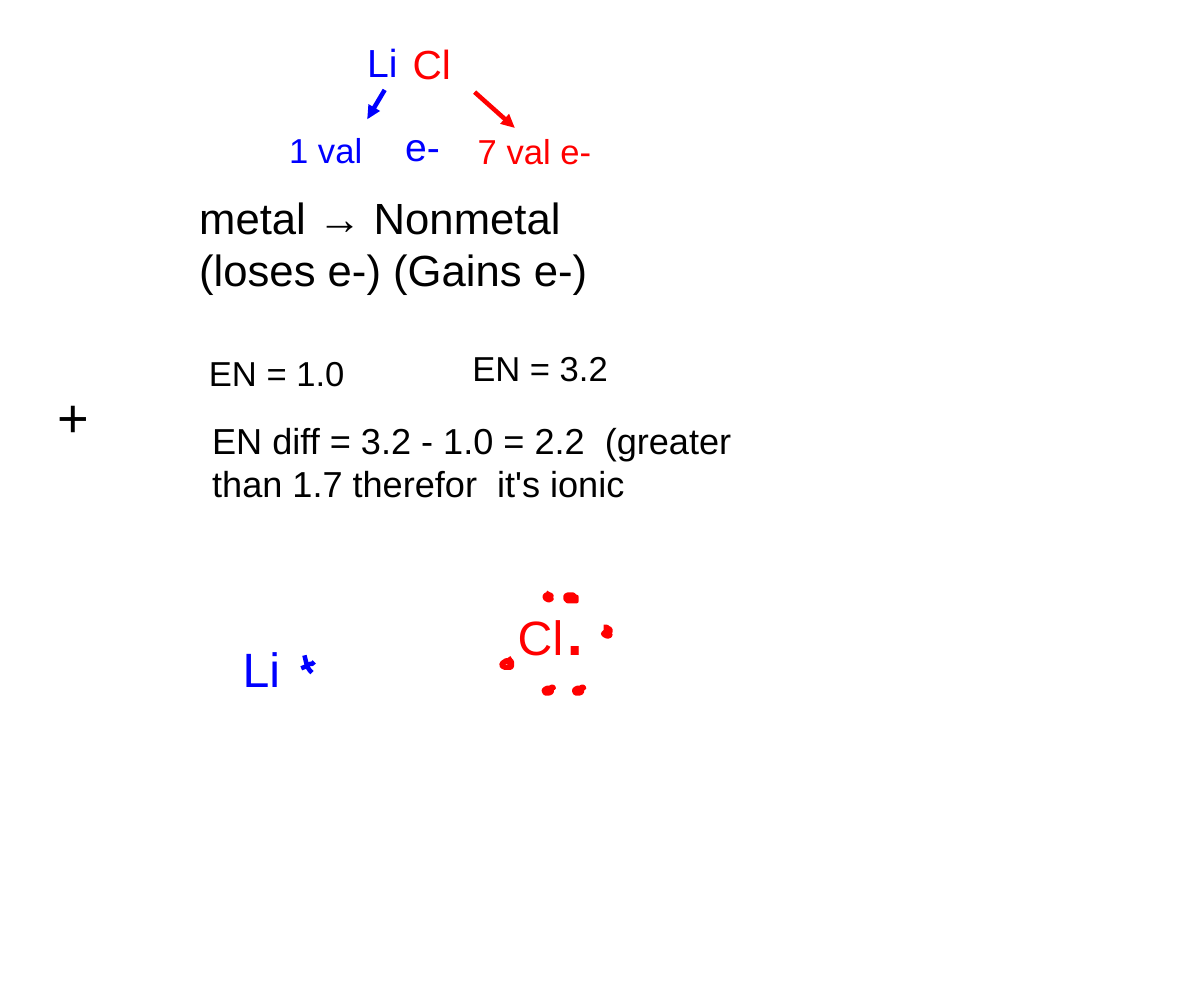
from lxml import etree
from pptx import Presentation
from pptx.dml.color import RGBColor
from pptx.enum.shapes import MSO_CONNECTOR
from pptx.enum.text import MSO_AUTO_SIZE as AutoSize
from pptx.oxml.ns import qn
from pptx.util import Inches, Pt

# Slide of 800 by 660 points
SLIDE_WIDTH = Inches(800 / 72)
SLIDE_HEIGHT = Inches(660 / 72)

BLUE = RGBColor(0x00, 0x00, 0xFF)
RED = RGBColor(0xFF, 0x00, 0x00)
BLACK = RGBColor(0x00, 0x00, 0x00)
FONT = "Arial"

# Pen strokes, in hundredths of an inch from the corner of each mark
PLUS_STROKES = [
    [(3, 0), (5, 8), (6, 9), (6, 11), (8, 14), (10, 16)],
    [(12, 6), (10, 8), (8, 8), (6, 9), (5, 10), (0, 12)],
]
TOP_LEFT_DOT = [
    (3, 2), (1, 2), (0, 3), (0, 5), (1, 6), (3, 7), (4, 7), (6, 6), (5, 4),
    (3, 3), (2, 3), (3, 4), (5, 4), (6, 3), (5, 2), (4, 2), (1, 0),
]
TOP_RIGHT_DOT = [
    (6, 0), (2, 0), (0, 1), (0, 4), (2, 6), (7, 6), (9, 4), (9, 2), (7, 0),
    (5, 0), (4, 1), (4, 3), (6, 5), (8, 6), (10, 6), (10, 2), (9, 2), (4, 0),
]
LEFT_DOT = [
    (6, 3), (4, 3), (1, 5), (0, 7), (1, 8), (3, 9), (8, 9), (9, 8), (9, 6),
    (7, 4), (6, 4), (7, 4), (9, 6), (9, 4), (8, 3), (6, 0),
]
RIGHT_DOT = [
    (5, 5), (3, 4), (2, 4), (0, 6), (1, 7), (3, 8), (5, 8), (6, 7), (5, 6),
    (2, 6), (3, 6), (5, 6), (6, 4), (6, 2), (4, 1), (3, 0), (0, 0),
]
BOTTOM_DOT = [
    (8, 1), (3, 1), (1, 2), (0, 3), (0, 4), (1, 6), (5, 6), (7, 5), (7, 2),
    (5, 1), (3, 2), (5, 3), (7, 2), (9, 1), (8, 0), (7, 0), (5, 2),
]


def format_run(run, size, color):
    run.font.name = FONT
    run.font.size = Pt(size)
    run.font.color.rgb = color


def add_text(slide, left, top, width, height, text, size, color):
    shape = slide.shapes.add_textbox(
        Inches(left), Inches(top), Inches(width), Inches(height))
    text_frame = shape.text_frame
    text_frame.word_wrap = True
    text_frame.auto_size = AutoSize.SHAPE_TO_FIT_TEXT
    text_frame.text = text
    for paragraph in text_frame.paragraphs:
        for run in paragraph.runs:
            format_run(run, size, color)
    return shape


def add_arrow(slide, start, end, color):
    points = [Inches(value) for value in (*start, *end)]
    arrow = slide.shapes.add_connector(MSO_CONNECTOR.STRAIGHT, *points)
    arrow.line.color.rgb = color
    arrow.line.width = Pt(3)
    properties = arrow.element.spPr
    etree.SubElement(properties.find(qn("a:ln")), qn("a:tailEnd"), type="triangle")
    etree.SubElement(properties, qn("a:effectLst"))


def add_stroke(slide, left, top, points, color, width=3):
    builder = slide.shapes.build_freeform(*points[0], scale=Inches(0.01))
    builder.add_line_segments(points[1:], close=False)
    stroke = builder.convert_to_shape(Inches(left), Inches(top))
    stroke.shadow.inherit = False
    stroke.fill.background()
    stroke.line.color.rgb = color
    stroke.line.width = Pt(width)


def add_formula(slide, left, top):
    """Compound symbols with an arrow to each valence count."""
    add_text(slide, left + 0.72, top, 0.53, 0.54, "Li", 26, BLUE)
    add_text(slide, left + 1.14, top, 0.61, 0.56, "Cl", 27, RED)
    add_text(slide, left, top + 0.83, 1.06, 0.49, "1 val", 23, BLUE)
    add_text(slide, left + 1.07, top + 0.77, 0.58, 0.54, "e-", 26, BLUE)
    add_text(slide, left + 1.74, top + 0.84, 1.58, 0.49, "7 val e-", 23, RED)
    add_arrow(slide, (left + 1.81, top + 0.54), (left + 2.18, top + 0.87), RED)
    add_arrow(slide, (left + 0.98, top + 0.52), (left + 0.82, top + 0.79), BLUE)


def add_bond_reasoning(slide, left, top):
    """Roles of the elements and their electronegativity difference."""
    add_text(slide, left, top, 4.97, 1.08,
             "metal → Nonmetal\n(loses e-) (Gains e-)", 29, BLACK)
    add_text(slide, left + 0.09, top + 1.49, 2, 0.49, "EN = 1.0", 23, BLACK)
    add_text(slide, left + 2.52, top + 1.44, 1.92, 0.49, "EN = 3.2", 23, BLACK)
    add_text(slide, left + 0.12, top + 2.1, 5.44, 0.91,
             "EN diff = 3.2 - 1.0 = 2.2  (greater than 1.7 therefor  it's ionic",
             24, BLACK)


def add_lithium_ion(slide, left, top):
    """Lithium symbol with a handwritten plus."""
    add_text(slide, left, top, 0.61, 0.64, "Li", 32, BLUE)
    for points in PLUS_STROKES:
        add_stroke(slide, left + 0.64, top + 0.2, points, BLUE)


def add_chlorine_dots(slide, left, top):
    """Chlorine symbol surrounded by its electron dots."""
    symbol = add_text(slide, left, top, 1, 1.04, "Cl", 32, RED)
    electron = symbol.text_frame.paragraphs[0].add_run()
    electron.text = "."
    format_run(electron, 56, RED)

    dots = [
        (0.35, 0.25, TOP_LEFT_DOT, 3),
        (0.54, 0.27, TOP_RIGHT_DOT, 3),
        (-0.05, 0.85, LEFT_DOT, 3.5),
        (0.89, 0.57, RIGHT_DOT, 3.5),
        (0.34, 1.12, BOTTOM_DOT, 3),
        (0.62, 1.12, BOTTOM_DOT, 3),
    ]
    for x, y, points, width in dots:
        add_stroke(slide, left + x, top + y, points, RED, width)


def main():
    presentation = Presentation()
    presentation.slide_width = SLIDE_WIDTH
    presentation.slide_height = SLIDE_HEIGHT
    slide = presentation.slides.add_slide(presentation.slide_layouts[6])

    add_formula(slide, 2.57, 0.31)
    add_bond_reasoning(slide, 1.74, 1.71)
    add_lithium_ion(slide, 2.14, 5.85)
    add_chlorine_dots(slide, 4.68, 5.22)
    # Plus sign in the left margin
    add_text(slide, 0.43, 3.49, 0.53, 0.71, "+", 36, BLACK)

    presentation.save("out.pptx")


if __name__ == "__main__":
    main()
